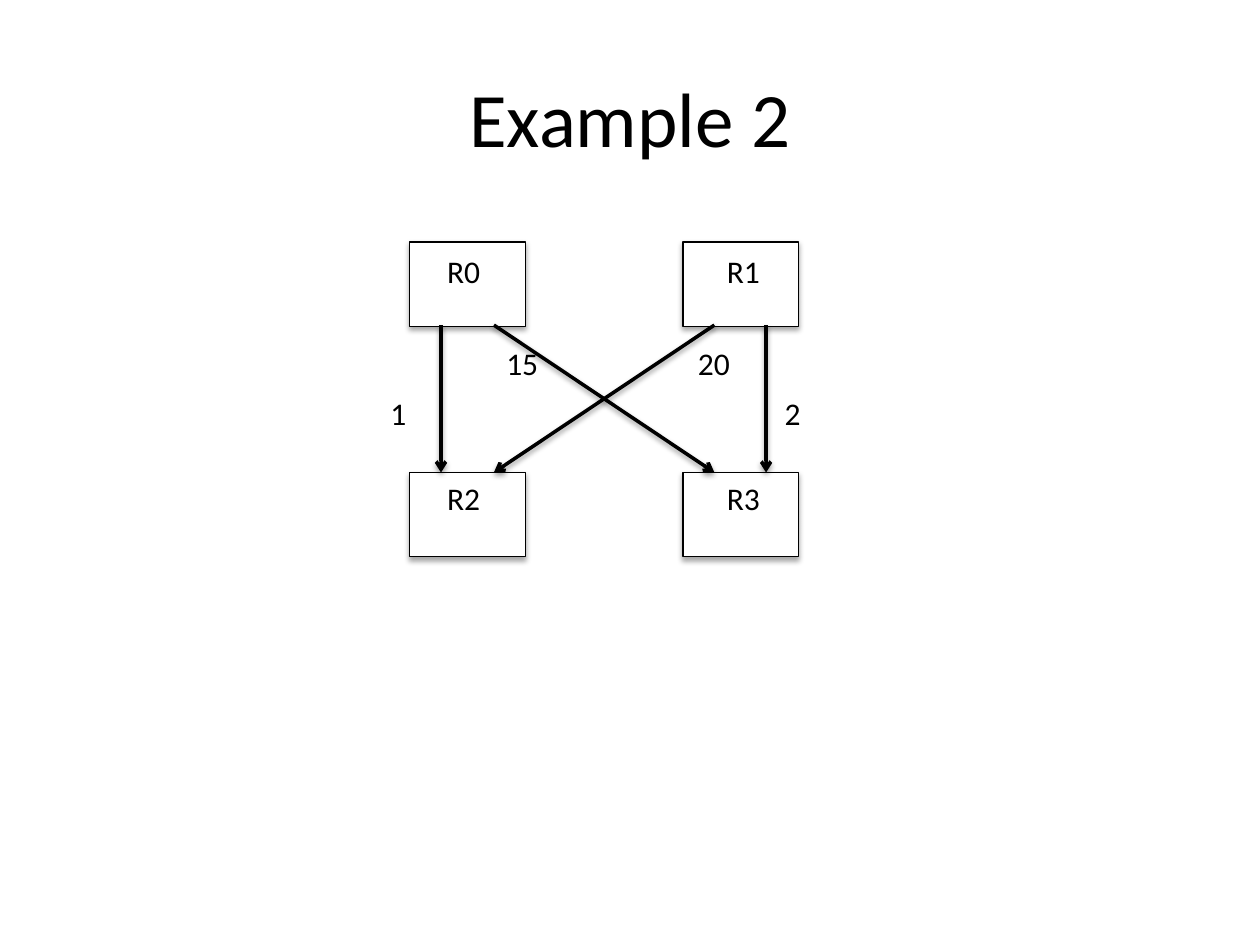
from dataclasses import dataclass

from lxml import etree
from pptx import Presentation
from pptx import util as u
from pptx.dml.color import RGBColor
from pptx.enum import shapes, text
from pptx.oxml import ns


@dataclass(frozen=True)
class Theme:
    font: str = "Calibri"
    ink: RGBColor = RGBColor(0, 0, 0)
    paper: RGBColor = RGBColor(255, 255, 255)
    title_size: float = 44
    label_size: float = 18
    box_line: float = 0.75
    arrow_line: float = 2


@dataclass(frozen=True)
class Shadow:
    opacity: int
    blur: float
    distance: float


@dataclass(frozen=True)
class Router:
    name: str
    left: float
    top: float
    label_top: float


@dataclass(frozen=True)
class Link:
    start_x: float
    end_x: float
    cost: str
    label_left: float
    label_top: float
    label_width: float


THEME = Theme()
BOX_SHADOW = Shadow(35, 3.1, 1.8)
ARROW_SHADOW = Shadow(38, 3.1, 1.6)
BOX_WIDTH, BOX_HEIGHT = 0.92, 0.67
TOP_ROW, BOTTOM_ROW = 1.92, 3.75
LEFT_COLUMN, RIGHT_COLUMN = 3.25, 5.42
LINK_TOP = 2.58

ROUTERS = [
    Router("R0", LEFT_COLUMN, TOP_ROW, 1.95),
    Router("R1", RIGHT_COLUMN, TOP_ROW, 1.95),
    Router("R2", LEFT_COLUMN, BOTTOM_ROW, BOTTOM_ROW),
    Router("R3", RIGHT_COLUMN, BOTTOM_ROW, BOTTOM_ROW),
]
LINKS = [
    Link(3.5, 3.5, "1", 3, 3.08, 0.33),
    Link(3.92, 5.67, "15", 3.92, 2.68, 0.46),
    Link(5.67, 3.92, "20", 5.44, 2.68, 0.46),
    Link(6.08, 6.08, "2", 6.13, 3.08, 0.33),
]


def format_font(font, size: float) -> None:
    for name, value in {"name": THEME.font, "size": u.Pt(size)}.items():
        setattr(font, name, value)
    font.color.rgb = THEME.ink


def format_line(line, width: float) -> None:
    line.color.rgb = THEME.ink
    line.width = u.Pt(width)


def add_shadow(properties, shadow: Shadow) -> None:
    """Give shape properties a soft shadow that falls straight down."""
    effects = properties.find(ns.qn("a:effectLst"))
    if effects is None:
        effects = etree.SubElement(properties, ns.qn("a:effectLst"))
    outer = etree.SubElement(
        effects, ns.qn("a:outerShdw"),
        blurRad=str(u.Pt(shadow.blur)), dist=str(u.Pt(shadow.distance)),
        dir="5400000", rotWithShape="0")
    color = etree.SubElement(outer, ns.qn("a:srgbClr"), val=str(THEME.ink))
    etree.SubElement(color, ns.qn("a:alpha"), val=str(shadow.opacity * 1000))


def add_label(slide, label: str, left: float, top: float, width: float) -> None:
    box = slide.shapes.add_textbox(
        u.Inches(left), u.Inches(top), u.Inches(width), u.Inches(0.4))
    frame = box.text_frame
    frame.text = label
    frame.word_wrap = False
    frame.auto_size = text.MSO_AUTO_SIZE.SHAPE_TO_FIT_TEXT
    format_font(frame.paragraphs[0].runs[0].font, THEME.label_size)


def add_box(slide, router: Router) -> None:
    box = slide.shapes.add_shape(
        shapes.MSO_SHAPE.RECTANGLE, u.Inches(router.left), u.Inches(router.top),
        u.Inches(BOX_WIDTH), u.Inches(BOX_HEIGHT))
    box.fill.solid()
    box.fill.fore_color.rgb = THEME.paper
    format_line(box.line, THEME.box_line)
    box.shadow.inherit = False
    add_shadow(box.element.spPr, BOX_SHADOW)


def add_arrow(slide, link: Link) -> None:
    arrow = slide.shapes.add_connector(
        shapes.MSO_CONNECTOR.STRAIGHT, u.Inches(link.start_x), u.Inches(LINK_TOP),
        u.Inches(link.end_x), u.Inches(BOTTOM_ROW))
    format_line(arrow.line, THEME.arrow_line)
    etree.SubElement(arrow.line._get_or_add_ln(), ns.qn("a:tailEnd"), type="arrow")
    add_shadow(arrow.element.spPr, ARROW_SHADOW)


def add_title(slide, wording: str) -> None:
    title = slide.shapes.title
    place = {"left": 0.5, "top": 0.3, "width": 9, "height": 1.25}
    for name, value in place.items():
        setattr(title, name, u.Inches(value))
    title.text_frame.text = wording
    title.text_frame.vertical_anchor = text.MSO_ANCHOR.MIDDLE
    paragraph = title.text_frame.paragraphs[0]
    paragraph.alignment = text.PP_ALIGN.CENTER
    format_font(paragraph.runs[0].font, THEME.title_size)


def main() -> None:
    presentation = Presentation()
    presentation.slide_width = u.Inches(10)
    presentation.slide_height = u.Inches(7.5)
    slide = presentation.slides.add_slide(
        presentation.slide_layouts.get_by_name("Title Only"))
    add_title(slide, "Example 2")
    for router in ROUTERS:
        add_box(slide, router)
    for link in LINKS:
        add_arrow(slide, link)
    for router in ROUTERS:
        label_offset = 0.2 if router.left == LEFT_COLUMN else 0.25
        add_label(slide, router.name, router.left + label_offset,
                  router.label_top, 0.47)
    for link in LINKS:
        add_label(slide, link.cost, link.label_left, link.label_top,
                  link.label_width)
    presentation.save("out.pptx")


if __name__ == "__main__":
    main()
